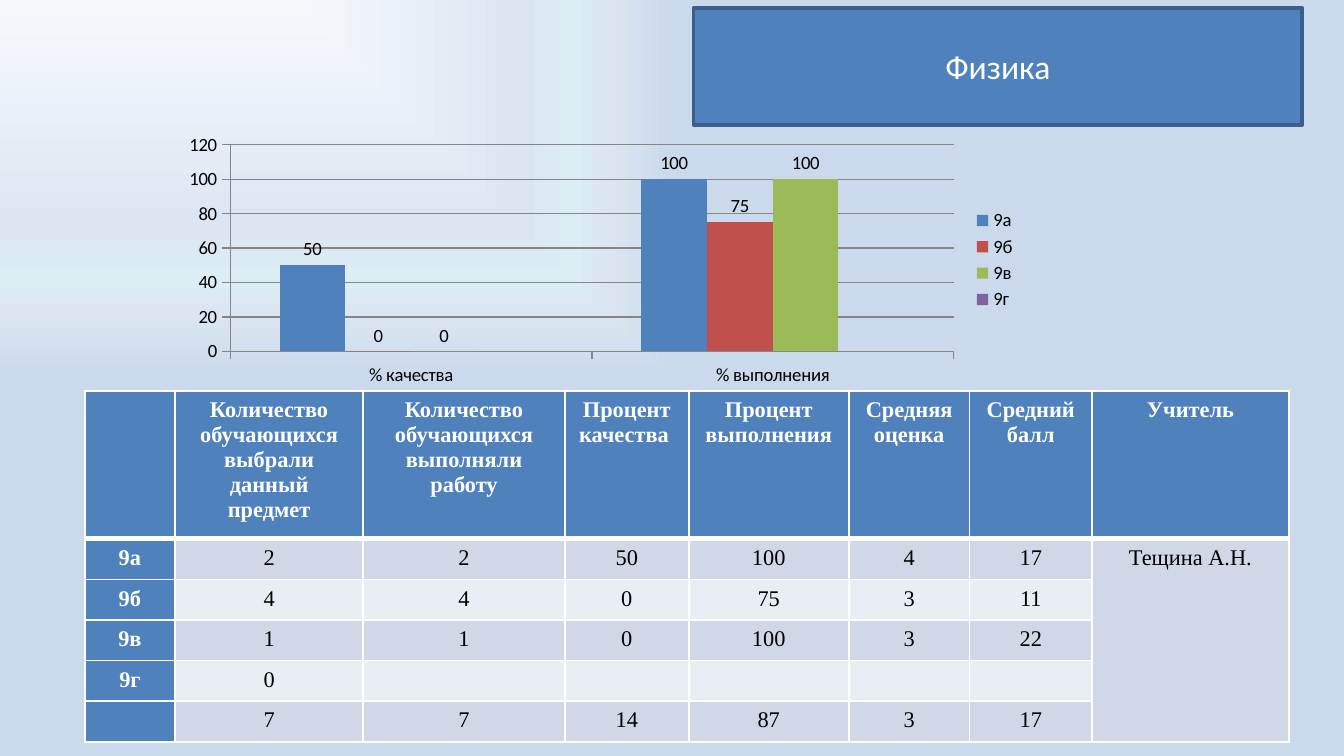
from lxml import etree
from pptx import Presentation
from pptx.chart import data
from pptx.dml.color import RGBColor
from pptx.enum import chart as ch, shapes, text
from pptx.oxml import parse_xml
from pptx.oxml.ns import nsdecls, qn
from pptx.util import Pt

SERIF = "Times New Roman"
BLUE, WHITE, BLACK, GREY = "4F81BD", "FFFFFF", "000000", "868686"


def rgb(code):
    return RGBColor.from_string(code)


def edge(cell, side, width):
    """Draw one white border; side is L, R, T or B."""
    line = etree.SubElement(cell.get_or_add_tcPr() if hasattr(cell, "get_or_add_tcPr") else cell,
                            qn(f"a:ln{side}"), w=str(Pt(width)))
    fill = etree.SubElement(line, qn("a:solidFill"))
    etree.SubElement(fill, qn("a:srgbClr"), val=WHITE)


deck = Presentation()
deck.slide_width, deck.slide_height = Pt(720), Pt(405)
slide = deck.slides.add_slide(deck.slide_layouts[6])

# Background: glow from the top left corner
stops = [(0, "F6F9FC"), (60, "DCE6F2"), (74, "DBEEF4"), (83, "DCE6F2"), (100, "CAD9EB")]
marks = "".join(f'<a:gs pos="{pos * 1000}"><a:srgbClr val="{code}"/></a:gs>' for pos, code in stops)
slide.element.cSld.insert(0, parse_xml(
    f'<p:bg {nsdecls("p", "a")}><p:bgPr><a:gradFill rotWithShape="1"><a:gsLst>{marks}</a:gsLst>'
    '<a:path path="rect"><a:fillToRect r="100000" b="100000"/></a:path></a:gradFill>'
    '<a:effectLst/></p:bgPr></p:bg>'))

# Title
title = slide.shapes.add_shape(shapes.MSO_SHAPE.RECTANGLE, Pt(371.5), Pt(4.3), Pt(326.2), Pt(62.6))
title.shadow.inherit = False
title.fill.solid()
title.fill.fore_color.rgb = rgb(BLUE)
title.line.color.rgb = rgb("3A5F8C")
title.line.width = Pt(2)
title.text_frame.vertical_anchor = text.MSO_ANCHOR.MIDDLE
para = title.text_frame.paragraphs[0]
para.alignment = text.PP_ALIGN.CENTER
run = para.add_run()
run.text = "Физика"
run.font.size, run.font.name = Pt(18), "Calibri"
run.font.color.rgb = rgb(WHITE)

# Chart
series = [("9а", (50, 100), BLUE), ("9б", (0, 75), "C0504D"),
          ("9в", (0, 100), "9BBB59"), ("9г", (None, None), "8064A2")]
source = data.CategoryChartData(number_format="General")
source.categories = ["% качества", "% выполнения"]
for name, vals, code in series:
    source.add_series(name, vals)
chart = slide.shapes.add_chart(ch.XL_CHART_TYPE.COLUMN_CLUSTERED, Pt(92.2), Pt(69.1),
                               Pt(459.4), Pt(140.4), source).chart
chart.has_title = False
chart.font.size, chart.font.name = Pt(10), "Calibri"
chart.font.color.rgb = rgb(BLACK)
chart.has_legend = True
chart.legend.position = ch.XL_LEGEND_POSITION.RIGHT
chart.legend.include_in_layout = False
plot = chart.plots[0]
plot.gap_width, plot.overlap, plot.vary_by_categories = 150, 0, False
for bars, (name, vals, code) in zip(plot.series, series):
    bars.format.fill.solid()
    bars.format.fill.fore_color.rgb = rgb(code)
    bars.invert_if_negative = False
    if vals[0] is not None:
        bars.data_labels.show_value = True
        bars.data_labels.position = ch.XL_LABEL_POSITION.OUTSIDE_END
chart.value_axis.has_major_gridlines = True
for axis in (chart.category_axis, chart.value_axis):
    axis.major_tick_mark = ch.XL_TICK_MARK.OUTSIDE
    axis.minor_tick_mark = ch.XL_TICK_MARK.NONE
for part in (chart.category_axis, chart.value_axis, chart.value_axis.major_gridlines):
    part.format.line.color.rgb = rgb(GREY)
    part.format.line.width = Pt(0.75)

# Table
rows = [
    ["", "Количество обучающихся выбрали данный предмет", "Количество обучающихся выполняли работу",
     "Процент качества ", "Процент выполнения", "Средняя оценка", "Средний балл", "Учитель"],
    ["9а", "2", "2", "50", "100", "4", "17", "Тещина А.Н."],
    ["9б", "4", "4", "0", "75", "3", "11", ""],
    ["9в", "1", "1", "0", "100", "3", "22", ""],
    ["9г", "0", "", "", "", "", "", ""],
    ["", "7", "7", "14", "87", "3", "17", ""],
]
widths = [48.4, 100.8, 108, 66.4, 85.7, 64.8, 65.5, 105.6]
heights = [79.2] + [21.7] * 5
table = slide.shapes.add_table(len(rows), len(widths), Pt(45.4), Pt(209.5),
                               Pt(sum(widths)), Pt(sum(heights))).table
table.first_row = table.horz_banding = False
for col, width in zip(table.columns, widths):
    col.width = Pt(width)
for row, height in zip(table.rows, heights):
    row.height = Pt(height)
table.cell(1, 7).merge(table.cell(5, 7))

for r, words in enumerate(rows):
    for c, word in enumerate(words):
        cell = table.cell(r, c)
        head = r == 0 or c == 0
        props = cell._tc.get_or_add_tcPr()
        for side in "LRTB":
            thick = (r, side) in ((0, "B"), (1, "T"))
            edge(props, side, 3 if thick else 1)
        shade = "D0D8E8" if r % 2 or c == 7 else "E9EDF4"
        cell.fill.solid()
        cell.fill.fore_color.rgb = rgb(BLUE if head else shade)
        para = cell.text_frame.paragraphs[0]
        para.alignment = text.PP_ALIGN.CENTER
        if word:
            run = para.add_run()
            run.text = word
            run.font.size, run.font.name, run.font.bold = Pt(12), SERIF, head
            run.font.color.rgb = rgb(WHITE if head else BLACK)
        else:
            etree.SubElement(para._p, qn("a:endParaRPr"), sz="1200")

deck.save("out.pptx")
